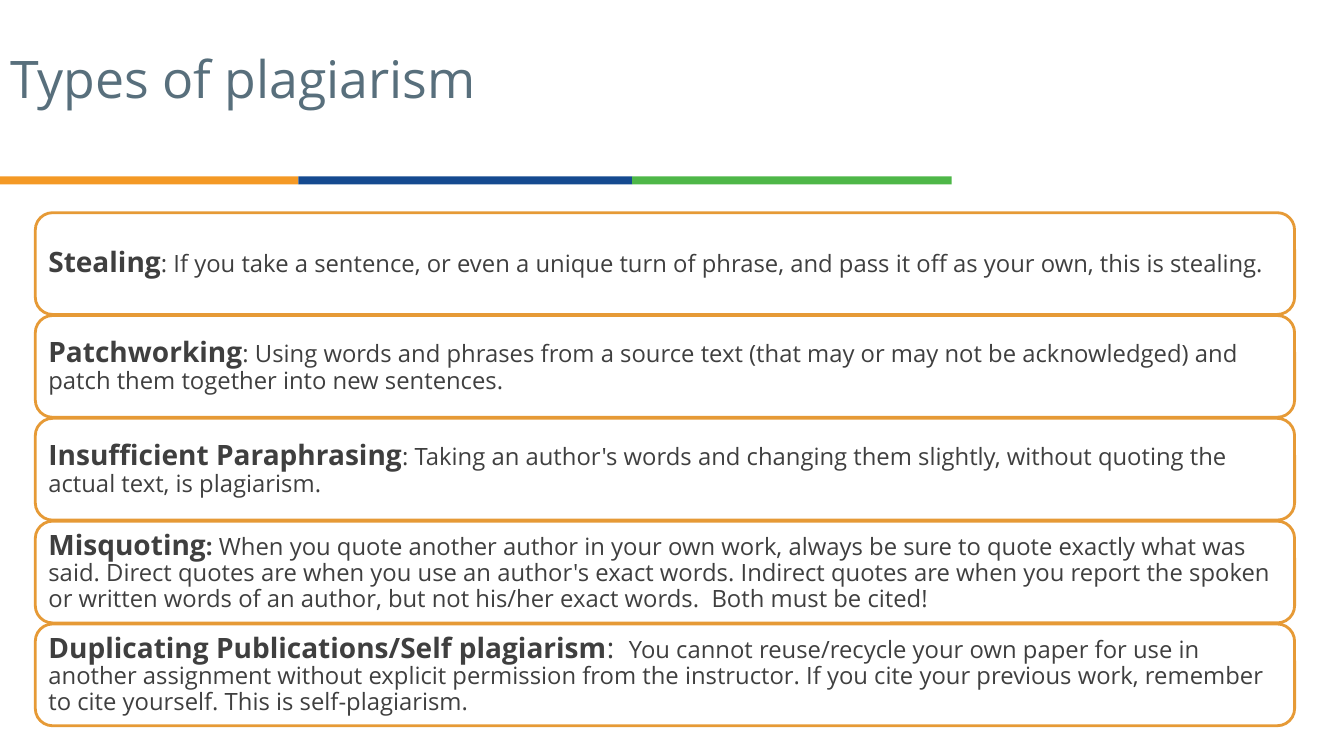
from pptx import Presentation
from pptx.dml.color import RGBColor
from pptx.enum.shapes import MSO_SHAPE
from pptx.enum.text import MSO_ANCHOR, PP_ALIGN
from pptx.util import Pt

PX = 9144  # 100 px to the inch
FONT = "Open Sans"
ORANGE = RGBColor(0xF4, 0x99, 0x25)
BLUE = RGBColor(0x15, 0x4A, 0x90)
GREEN = RGBColor(0x4E, 0xB7, 0x48)
AMBER = RGBColor(0xE6, 0x9A, 0x36)
SLATE = RGBColor(0x58, 0x6F, 0x7C)
GREY = RGBColor(0x3F, 0x3F, 0x3F)
WHITE = RGBColor(0xFF, 0xFF, 0xFF)
RECTANGLE, ROUNDED = MSO_SHAPE.RECTANGLE, MSO_SHAPE.ROUNDED_RECTANGLE
TOP, MIDDLE, LEFT = MSO_ANCHOR.TOP, MSO_ANCHOR.MIDDLE, PP_ALIGN.LEFT

STRIPES = [(0, 296, ORANGE), (296, 331, BLUE), (627, 317, GREEN)]
CARD_LEFT, CARD_TOP, CARD_WIDTH, CARD_HEIGHT, CARD_STEP = 35, 211, 1249, 101, 102
# Each card is a list of (text, size, bold)
CARDS = [
    [("Stealing", 20, True),
     (": If you take a sentence, or even a unique turn of phrase, and pass it off "
      "as your own, this is stealing.", 17, False)],
    [("Patchworking", 20, True),
     (": Using words and phrases from a source text (that may or may not be "
      "acknowledged) and patch them together into new sentences.", 17, False)],
    [("Insufficient Paraphrasing", 20, True),
     (": Taking an author's words and changing them slightly, without quoting the "
      "actual text, is plagiarism.", 17, False)],
    [("Misquoting", 20, True),
     (":", 17, True),
     (" When you quote another author in your own work, always be sure to quote "
      "exactly what was said. Direct quotes are when you use an author's exact words. "
      "Indirect quotes are when you report the spoken or written words of an author, "
      "but not his/her exact words.  Both must be cited!", 17, False)],
    [("Duplicating Publications/Self plagiarism", 20, True),
     (":  ", 20, False),
     ("You cannot reuse/recycle your own paper for use in another assignment without "
      "explicit permission from the instructor. If you cite your previous work, "
      "remember to cite yourself. This is self-plagiarism.", 17, False)],
]


def write(frame, spans, color, anchor, side, edge):
    """Fill a frame with one paragraph of (text, size, bold) spans; insets in px."""
    frame.word_wrap = True
    frame.vertical_anchor = anchor
    frame.margin_left = frame.margin_right = side * PX
    frame.margin_top = frame.margin_bottom = edge * PX
    para = frame.paragraphs[0]
    para.alignment = LEFT
    para.line_spacing = 0.9
    for text, size, bold in spans:
        span = para.add_run()
        span.text = text
        span.font.name = FONT
        span.font.size = Pt(size)
        span.font.bold = bold
        span.font.color.rgb = color


def add_box(page, kind, left, top, width, height, fill):
    box = page.shapes.add_shape(kind, left * PX, top * PX, width * PX, height * PX)
    box.shadow.inherit = False
    box.fill.solid()
    box.fill.fore_color.rgb = fill
    box.line.fill.background()
    return box


deck = Presentation()
deck.slide_width, deck.slide_height = 1333 * PX, 750 * PX
page = deck.slides.add_slide(deck.slide_layouts.get_by_name("Title Only"))

title = page.shapes.title
title.left, title.top, title.width, title.height = 0, 48 * PX, 890 * PX, 118 * PX
write(title.text_frame, [("Types of plagiarism", 37, False)], SLATE, TOP, 10, 5)

for left, width, color in STRIPES:
    add_box(page, RECTANGLE, left, 175, width, 8, color)

for row, spans in enumerate(CARDS):
    card = add_box(page, ROUNDED, CARD_LEFT, CARD_TOP + row * CARD_STEP,
                   CARD_WIDTH, CARD_HEIGHT, WHITE)
    card.adjustments[0] = 0.17
    card.line.color.rgb = AMBER
    card.line.width = Pt(2)
    write(card.text_frame, spans, GREY, MIDDLE, 8, 8)

deck.save("out.pptx")
